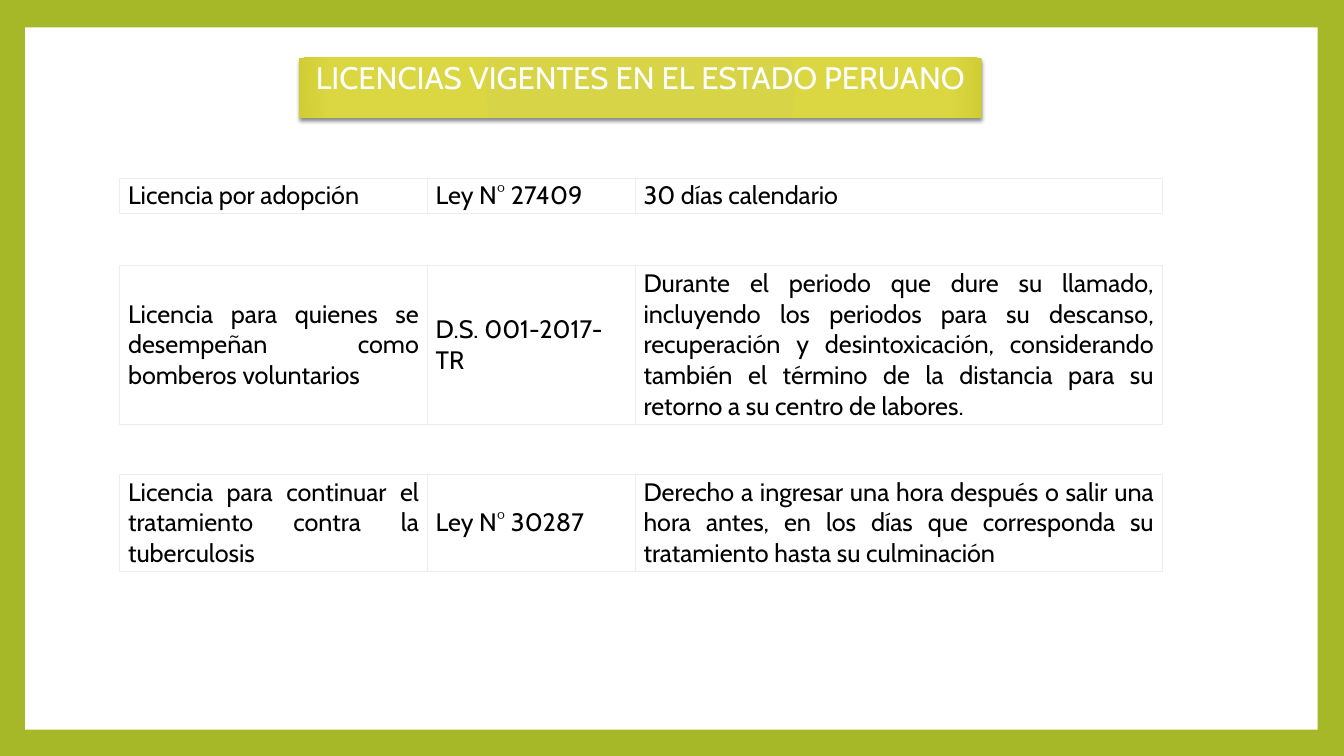
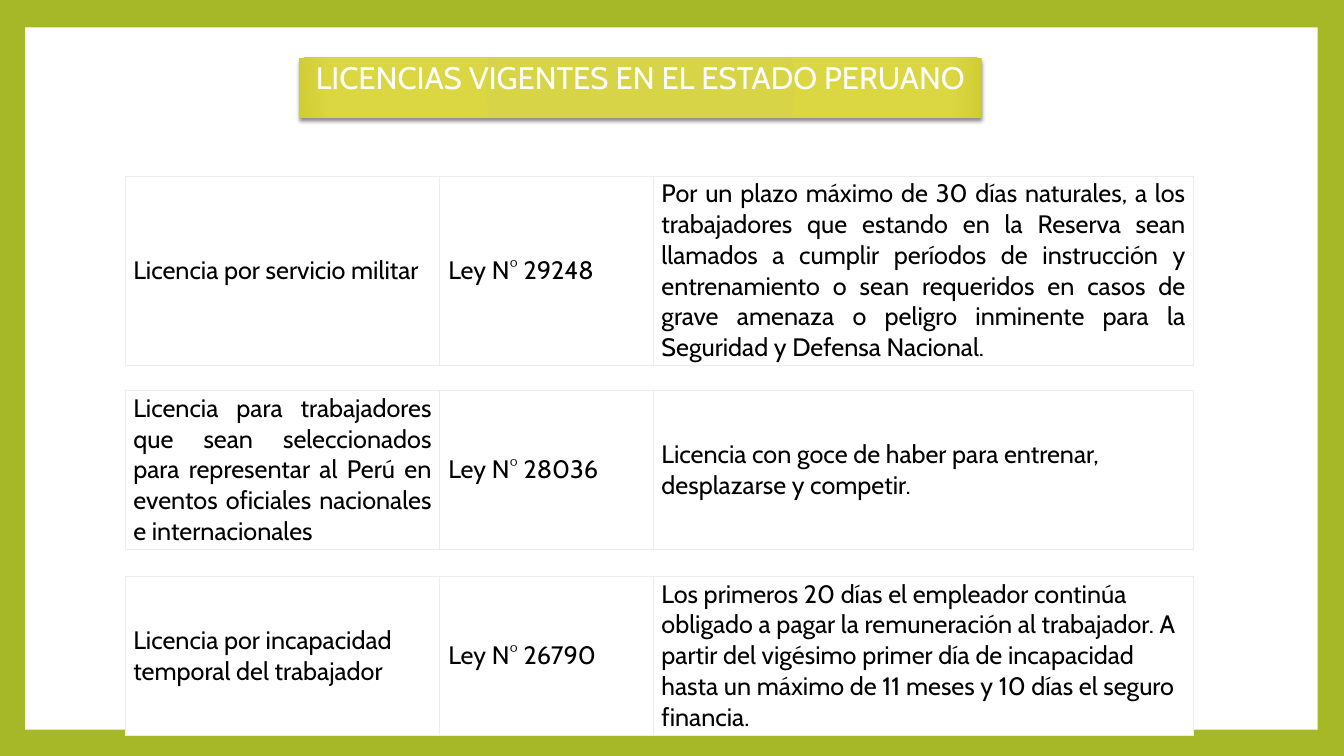
"""Builds two slides listing the leave types in force in the Peruvian state."""
from pptx import Presentation
from pptx.dml.color import RGBColor
from pptx.enum.shapes import MSO_SHAPE
from pptx.enum.text import MSO_ANCHOR, PP_ALIGN
from pptx.oxml import parse_xml
from pptx.oxml.ns import nsdecls
from pptx.util import Pt

PX = 9525
FONT = "Cabin"
TITLE = "LICENCIAS VIGENTES EN EL ESTADO PERUANO"
HUES = {"back": "A6B727", "white": "FFFFFF", "text": "000000", "edge": "EDEDED",
        "core": "D7D447", "mid": "DBD743", "rim": "D0CD33"}
ALIGN = {"l": PP_ALIGN.LEFT, "c": PP_ALIGN.CENTER, "j": PP_ALIGN.JUSTIFY}
STOPS = [(0, "core"), (90, "mid"), (100, "rim")]
CELL = {"margin_left": 8 * PX, "margin_right": 8 * PX, "margin_top": 2 * PX,
        "margin_bottom": 2 * PX, "vertical_anchor": MSO_ANCHOR.MIDDLE}
PLAIN = {"first_row": False, "horz_banding": False}

PAGES = [
    {"left": 114, "cols": [293, 198, 502], "rows": [
        (170, 33, "lll", ["Licencia por adopción", "Ley N° 27409", "30 días calendario"]),
        (253, 151, "jlj", [
            "Licencia para quienes se desempeñan como bomberos voluntarios",
            "D.S. 001-2017-TR",
            "Durante el periodo que dure su llamado, incluyendo los periodos para su "
            "descanso, recuperación y desintoxicación, considerando también el término "
            "de la distancia para su retorno a su centro de labores."]),
        (452, 92, "jlj", [
            "Licencia para continuar el tratamiento contra la tuberculosis",
            "Ley N° 30287",
            "Derecho a ingresar una hora después o salir una hora antes, en los días "
            "que corresponda su tratamiento hasta su culminación"])]},
    {"left": 119, "cols": [300, 203, 515], "rows": [
        (168, 179, "llj", [
            "Licencia por servicio militar",
            "Ley N° 29248",
            "Por un plazo máximo de 30 días naturales, a los trabajadores que estando "
            "en la Reserva sean llamados a cumplir períodos de instrucción y "
            "entrenamiento o sean requeridos en casos de grave amenaza o peligro "
            "inminente para la Seguridad y Defensa Nacional."]),
        (372, 151, "jll", [
            "Licencia para trabajadores que sean seleccionados para representar al "
            "Perú en eventos oficiales nacionales e internacionales",
            "Ley N° 28036",
            "Licencia con goce de haber para entrenar, desplazarse y competir."]),
        (549, 151, "lll", [
            "Licencia por incapacidad temporal del trabajador",
            "Ley N° 26790",
            "Los primeros 20 días el empleador continúa obligado a pagar la "
            "remuneración al trabajador. A partir del vigésimo primer día de "
            "incapacidad hasta un máximo de 11 meses y 10 días el seguro financia."])]},
]


def write(frame, text, size, hue, align):
    frame.word_wrap = True
    para = frame.paragraphs[0]
    para.alignment = ALIGN[align]
    run = para.add_run()
    run.text = text
    for name, value in {"name": FONT, "size": Pt(size)}.items():
        setattr(run.font, name, value)
    run.font.color.rgb = RGBColor.from_string(HUES[hue])
    return para


def block(slide, *box):
    shape = slide.shapes.add_shape(MSO_SHAPE.RECTANGLE, *[n * PX for n in box])
    shape.shadow.inherit = False
    shape.line.fill.background()
    shape.fill.solid()
    shape.fill.fore_color.rgb = RGBColor.from_string(HUES["white"])
    return shape


deck = Presentation()
deck.slide_width, deck.slide_height = 1280 * PX, 720 * PX

for page in PAGES:
    slide = deck.slides.add_slide(deck.slide_layouts[6])
    slide.background.fill.solid()
    slide.background.fill.fore_color.rgb = RGBColor.from_string(HUES["back"])
    block(slide, 24, 26, 1231, 669)

    band = block(slide, 285, 55, 650, 57)
    props = band.fill._xPr
    stops = "".join(f'<a:gs pos="{at * 1000}"><a:srgbClr val="{HUES[hue]}"/></a:gs>'
                    for at, hue in STOPS)
    props.replace(props.find("{*}solidFill"), parse_xml(
        f'<a:gradFill {nsdecls("a")} rotWithShape="1"><a:gsLst>{stops}</a:gsLst>'
        '<a:path path="circle"><a:fillToRect l="100000" t="100000" r="100000" b="100000"/>'
        '</a:path></a:gradFill>'))
    props.find("{*}effectLst").append(parse_xml(
        f'<a:outerShdw {nsdecls("a")} blurRad="{Pt(3)}" dist="{Pt(2)}" dir="5400000" '
        f'rotWithShape="0"><a:srgbClr val="{HUES["text"]}"><a:alpha val="45000"/>'
        '</a:srgbClr></a:outerShdw>'))
    band.text_frame.vertical_anchor = MSO_ANCHOR.TOP
    write(band.text_frame, TITLE, 22.2, "white", "c").line_spacing = 0.9

    for top, high, aligns, texts in page["rows"]:
        box = [page["left"], top, sum(page["cols"]), high]
        table = slide.shapes.add_table(1, len(texts), *[n * PX for n in box]).table
        for name, value in PLAIN.items():
            setattr(table, name, value)
        for col, wide in zip(table.columns, page["cols"]):
            col.width = wide * PX
        for cell, text, align in zip(table.rows[0].cells, texts, aligns):
            for name, value in CELL.items():
                setattr(cell, name, value)
            write(cell.text_frame, text, 18, "text", align)
            for side in "LRTB":
                cell._tc.get_or_add_tcPr().append(parse_xml(
                    f'<a:ln{side} {nsdecls("a")} w="{Pt(0.75)}"><a:solidFill>'
                    f'<a:srgbClr val="{HUES["edge"]}"/></a:solidFill></a:ln{side}>'))
            cell.fill.solid()
            cell.fill.fore_color.rgb = RGBColor.from_string(HUES["white"])

deck.save("out.pptx")
